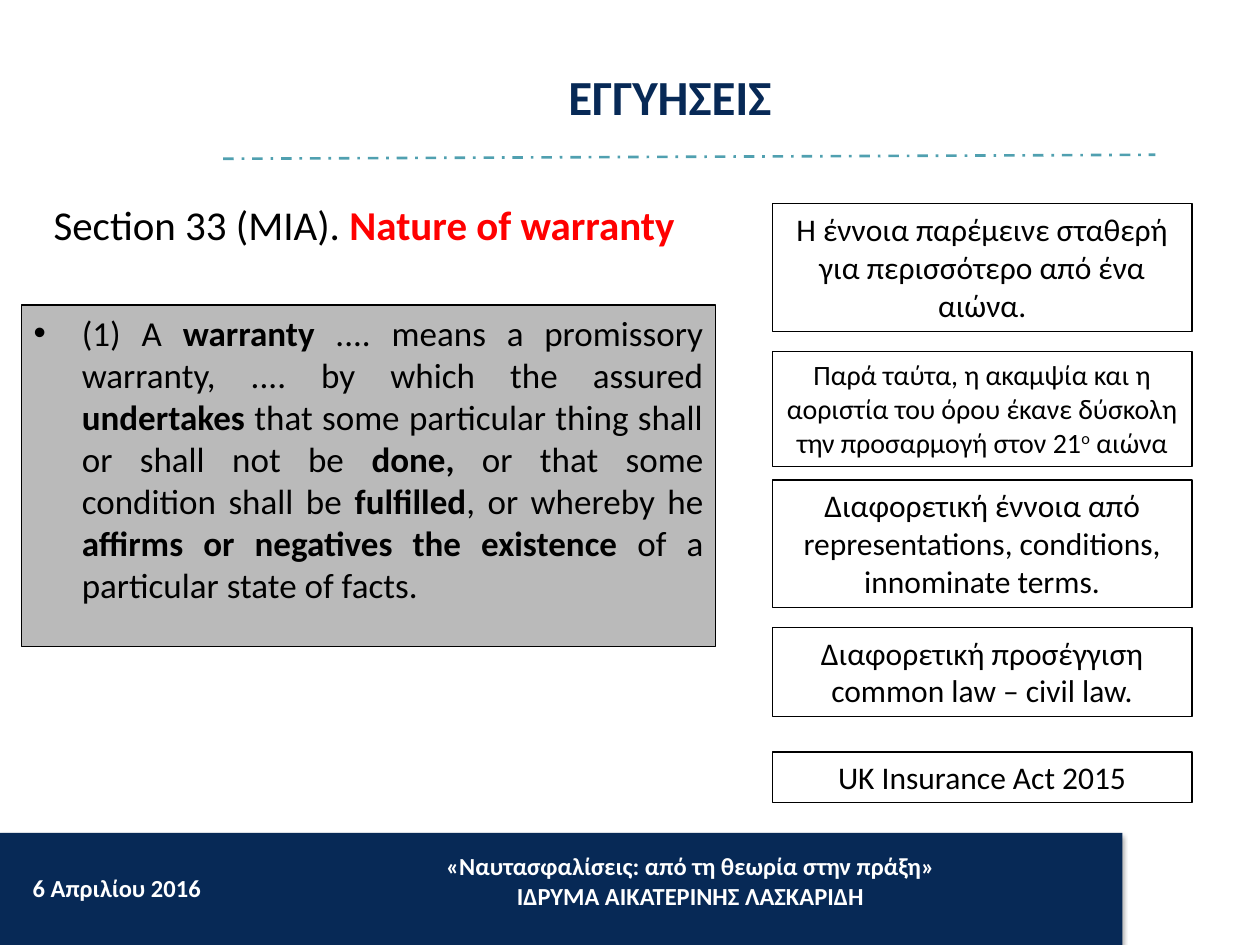
"""Build the slide on the nature of warranty in marine insurance."""
from dataclasses import dataclass

from lxml import etree
from pptx import Presentation
from pptx.dml.color import RGBColor
from pptx.enum.dml import MSO_LINE
from pptx.enum.shapes import MSO_CONNECTOR, MSO_SHAPE
from pptx.enum.text import MSO_ANCHOR, MSO_AUTO_SIZE, PP_ALIGN
from pptx.oxml.ns import qn
from pptx.util import Cm, Pt

RECT = MSO_SHAPE.RECTANGLE
STRAIGHT = MSO_CONNECTOR.STRAIGHT
DASH = MSO_LINE.DASH_DOT
TOP = MSO_ANCHOR.TOP
GROW = MSO_AUTO_SIZE.SHAPE_TO_FIT_TEXT
FIXED = MSO_AUTO_SIZE.NONE
LEFT, MID, FULL = PP_ALIGN.LEFT, PP_ALIGN.CENTER, PP_ALIGN.JUSTIFY


@dataclass(frozen=True)
class Theme:
    """Hold the colours, type sizes and font."""
    navy: str = "072956"
    teal: str = "50A0B0"
    grey: str = "BABABA"
    red: str = "FF0000"
    black: str = "000000"
    white: str = "FFFFFF"
    font: str = "Calibri"
    title: float = 28
    head: float = 23.4
    body: float = 20
    note: float = 18
    small: float = 16
    foot: float = 14


LOOK = Theme()
BOLD = {"bold": True}
RED = {"bold": True, "color": LOOK.red}
SUPER = {"base": 30}

TERMS = [
    ("(1) A ", {}), ("warranty ", BOLD),
    (".... means a promissory warranty, .... by which the assured ", {}),
    ("undertakes", BOLD),
    (" that some particular thing shall or shall not be ", {}),
    ("done,", BOLD), (" or that some condition shall be ", {}),
    ("fulfilled", BOLD), (", or whereby he ", {}),
    ("affirms or negatives the existence ", BOLD),
    ("of a particular state of facts.", {}),
]
NOTES = [
    (4.11, 2.57, LOOK.note,
     [("Η έννοια παρέμεινε σταθερή για περισσότερο από ένα αιώνα.", {})]),
    (7.09, 2.31, LOOK.small,
     [("Παρά ταύτα, η ακαμψία και η αοριστία του όρου έκανε δύσκολη "
       "την προσαρμογή στον 21", {}), ("ο", SUPER), (" αιώνα", {})]),
    (9.68, 2.57, LOOK.note,
     [("Διαφορετική έννοια από representations, conditions, "
       "innominate terms.", {})]),
    (12.65, 1.8, LOOK.note,
     [("Διαφορετική προσέγγιση common law – civil law.", {})]),
    (15.16, 1.02, LOOK.note, [("UK Insurance Act 2015", {})]),
]


def apply(item, **vals):
    """Set each named attribute on the item."""
    for name, val in vals.items():
        setattr(item, name, val)


def write(shape, paras, size, color=LOOK.black, align=MID, grow=GROW):
    """Fill a shape with paragraphs made of styled runs."""
    frame = shape.text_frame
    apply(frame, word_wrap=True, auto_size=grow, vertical_anchor=TOP)
    for idx, runs in enumerate(paras):
        para = frame.add_paragraph() if idx else frame.paragraphs[0]
        para.alignment = align
        for text, style in runs:
            run = para.add_run()
            run.text = text
            apply(run.font, name=LOOK.font, size=Pt(size),
                  bold=style.get("bold", False))
            run.font.color.rgb = RGBColor.from_string(
                style.get("color", color))
            if "base" in style:
                run.font._element.set("baseline", str(style["base"] * 1000))


def label(slide, area, paras, size, **style):
    """Add a plain text box."""
    box = slide.shapes.add_textbox(*map(Cm, area))
    write(box, paras, size, **style)


def panel(slide, area, fill=None, edge=LOOK.black):
    """Add a flat rectangle and return it."""
    box = slide.shapes.add_shape(RECT, *map(Cm, area))
    box.shadow.inherit = False
    if fill:
        box.fill.solid()
        box.fill.fore_color.rgb = RGBColor.from_string(fill)
    else:
        box.fill.background()
    if edge:
        box.line.color.rgb = RGBColor.from_string(edge)
        box.line.width = Pt(0.75)
    else:
        box.line.fill.background()
    return box


def shade(shape):
    """Give a shape a soft drop shadow."""
    effect = shape._element.spPr.find(qn("a:effectLst"))
    cast = etree.SubElement(effect, qn("a:outerShdw"), blurRad=str(Pt(3.1)),
                            dist=str(Pt(1.8)), dir="5400000",
                            rotWithShape="0")
    tint = etree.SubElement(cast, qn("a:srgbClr"), val=LOOK.black)
    etree.SubElement(tint, qn("a:alpha"), val="35000")


def rule(slide, ends):
    """Draw the dashed line below the title."""
    line = slide.shapes.add_connector(STRAIGHT, *map(Cm, ends))
    line.line.color.rgb = RGBColor.from_string(LOOK.teal)
    apply(line.line, width=Pt(1.5), dash_style=DASH)
    etree.SubElement(line._element.spPr, qn("a:effectLst"))


def bullet(para, indent):
    """Put a hanging bullet on a paragraph."""
    props = para._p.get_or_add_pPr()
    props.set("marL", str(Cm(indent)))
    props.set("indent", str(-Cm(indent)))
    etree.SubElement(props, qn("a:buFont"), typeface="Arial")
    etree.SubElement(props, qn("a:buChar"), char="•")


def main():
    """Build and save the slide."""
    deck = Presentation()
    apply(deck, slide_width=Cm(25.4), slide_height=Cm(19.05))
    slide = deck.slides.add_slide(deck.slide_layouts[6])

    shade(panel(slide, (0, 16.79, 22.63, 2.26), LOOK.navy, None))
    rule(slide, (4.5, 3.2, 23.29, 3.12))
    label(slide, (0, 3.89, 14.68, 1.3),
          [[("Section 33 (MIA). ", {}), ("Nature of warranty", RED)]],
          LOOK.head, grow=FIXED)

    clause = panel(slide, (0.43, 6.15, 14, 6.88), LOOK.grey)
    bullet(clause.text_frame.paragraphs[0], 0.97)
    write(clause, [TERMS], LOOK.body, align=FULL, grow=FIXED)

    for top, high, size, runs in NOTES:
        write(panel(slide, (15.57, top, 8.46, high)), [runs], size)

    label(slide, (0.41, 17.48, 5.11, 0.86), [[("6 Aπριλίου 2016", BOLD)]],
          LOOK.foot, color=LOOK.white, align=LEFT)
    label(slide, (7.34, 17.04, 13.16, 1.45),
          [[("«Ναυτασφαλίσεις: από τη θεωρία στην πράξη»", BOLD)],
           [("ΙΔΡΥΜΑ ΑΙΚΑΤΕΡΙΝΗΣ ΛΑΣΚΑΡΙΔΗ", BOLD)]],
          LOOK.foot, color=LOOK.white)
    label(slide, (4.83, 1.22, 17.35, 1.45), [[("ΕΓΓΥΗΣΕΙΣ", BOLD)]],
          LOOK.title, color=LOOK.navy)
    deck.save("out.pptx")


if __name__ == "__main__":
    main()
